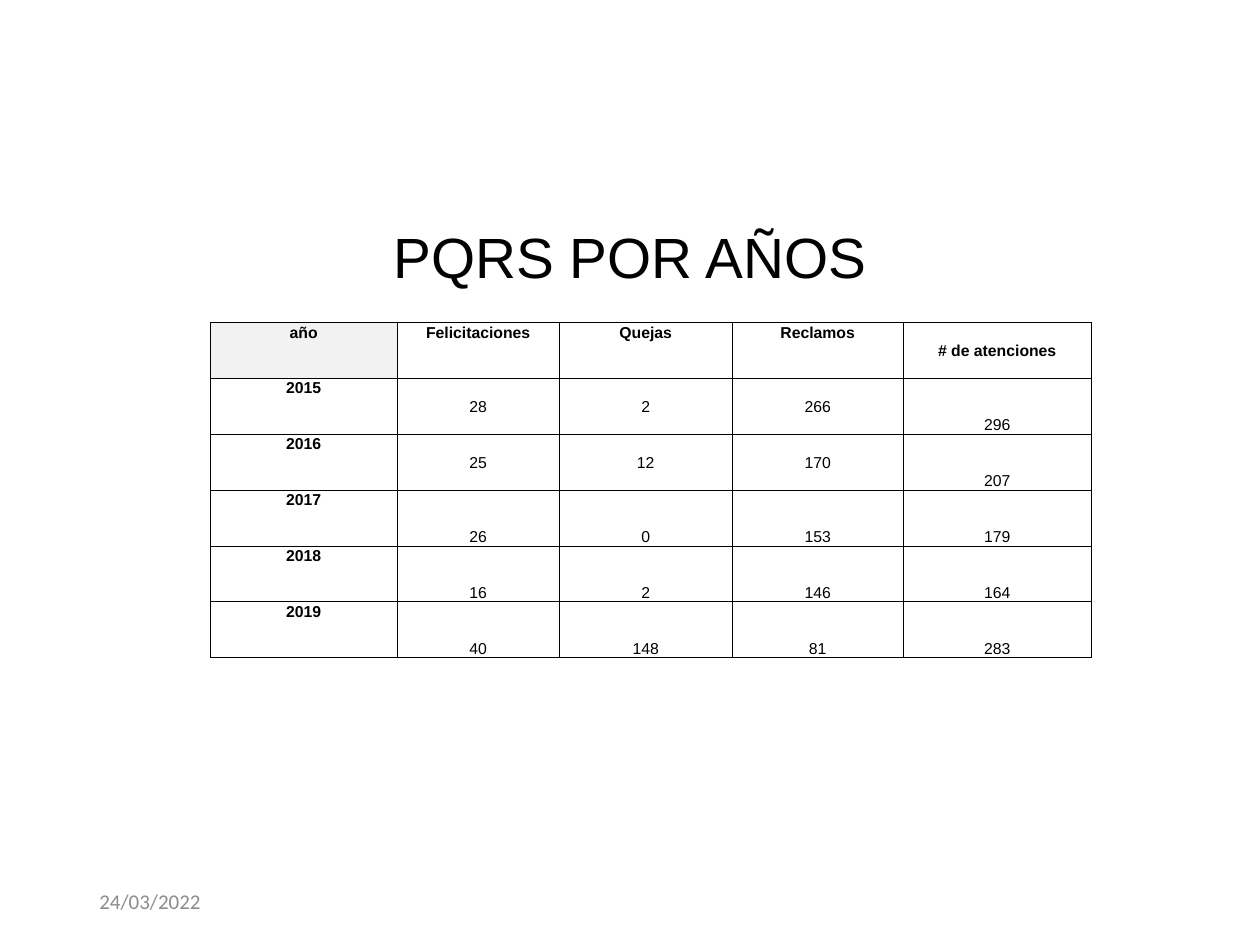
from dataclasses import dataclass

from lxml.etree import SubElement
from pptx import Presentation
from pptx.dml.color import RGBColor
from pptx.enum.text import MSO_ANCHOR, PP_ALIGN
from pptx.oxml.ns import qn
from pptx.table import Table, _Cell
from pptx.text.text import TextFrame
from pptx.util import Inches, Pt


@dataclass(frozen=True)
class Theme:
    font: str = "Arial"
    date_font: str = "Calibri"
    ink: str = "000000"
    muted: str = "8C8C8C"
    shade: str = "F2F2F2"
    title_size: float = 32.4
    date_size: float = 12
    cell_size: float = 9
    border: float = 0.5


@dataclass(frozen=True)
class Row:
    texts: tuple[str, ...]
    anchor: MSO_ANCHOR
    last_anchor: MSO_ANCHOR
    header: bool = False


THEME = Theme()
TOP, MIDDLE, BOTTOM = MSO_ANCHOR.TOP, MSO_ANCHOR.MIDDLE, MSO_ANCHOR.BOTTOM
COL_WIDTHS = (1.48, 1.29, 1.37, 1.36, 1.49)
TABLE_HEIGHT = 2.66
ROWS = (
    Row(("año", "Felicitaciones", "Quejas", "Reclamos", "# de atenciones"), TOP, MIDDLE, True),
    Row(("2015", "28", "2", "266", "296"), MIDDLE, BOTTOM),
    Row(("2016", "25", "12", "170", "207"), MIDDLE, BOTTOM),
    Row(("2017", "26", "0", "153", "179"), BOTTOM, BOTTOM),
    Row(("2018", "16", "2", "146", "164"), BOTTOM, BOTTOM),
    Row(("2019", "40", "148", "81", "283"), BOTTOM, BOTTOM),
)


def write(tf: TextFrame, text: str, font: str, size: float, color: str,
          align: PP_ALIGN = PP_ALIGN.CENTER, bold: bool = False) -> None:
    tf.text = text
    p = tf.paragraphs[0]
    p.alignment = align
    r = p.runs[0]
    r.font.name = font
    r.font.size = Pt(size)
    r.font.bold = bold
    r.font.color.rgb = RGBColor.from_string(color)


def add_borders(cell: _Cell) -> None:
    tc_pr = cell._tc.get_or_add_tcPr()
    for side in ("lnL", "lnR", "lnT", "lnB"):
        ln = SubElement(tc_pr, qn(f"a:{side}"), w=str(Pt(THEME.border)))
        fill = SubElement(ln, qn("a:solidFill"))
        SubElement(fill, qn("a:srgbClr"), val=THEME.ink)


def fill_row(table: Table, index: int, row: Row) -> None:
    last = len(row.texts) - 1
    for col, text in enumerate(row.texts):
        cell = table.cell(index, col)
        write(cell.text_frame, text, THEME.font, THEME.cell_size, THEME.ink,
              bold=row.header or col == 0)
        cell.margin_left = cell.margin_right = cell.margin_top = Inches(0.01)
        cell.margin_bottom = Inches(0)
        cell.vertical_anchor = TOP if col == 0 else row.last_anchor if col == last else row.anchor
        add_borders(cell)
        if row.header and col == 0:
            cell.fill.solid()
            cell.fill.fore_color.rgb = RGBColor.from_string(THEME.shade)
        else:
            cell.fill.background()


def main() -> None:
    prs = Presentation()
    prs.slide_width, prs.slide_height = Inches(10), Inches(7.5)
    s = prs.slides.add_slide(prs.slide_layouts[5])

    title = s.shapes.title
    title.left, title.top = Inches(0.75), Inches(1.23)
    title.width, title.height = Inches(8.5), Inches(1.6)
    title.text_frame.vertical_anchor = MIDDLE
    write(title.text_frame, "PQRS POR AÑOS", THEME.font, THEME.title_size, THEME.ink)

    date = s.shapes.add_textbox(Inches(0.69), Inches(6.95), Inches(2.25), Inches(0.4))
    date.text_frame.word_wrap = True
    date.text_frame.vertical_anchor = MIDDLE
    write(date.text_frame, "24/03/2022", THEME.date_font, THEME.date_size, THEME.muted,
          PP_ALIGN.LEFT)

    table = s.shapes.add_table(len(ROWS), len(COL_WIDTHS), Inches(1.67), Inches(2.56),
                               Inches(sum(COL_WIDTHS)), Inches(TABLE_HEIGHT)).table
    table.first_row = table.horz_banding = False
    for column, width in zip(table.columns, COL_WIDTHS):
        column.width = Inches(width)
    for index, row in enumerate(ROWS):
        fill_row(table, index, row)

    prs.save("out.pptx")


if __name__ == "__main__":
    main()
